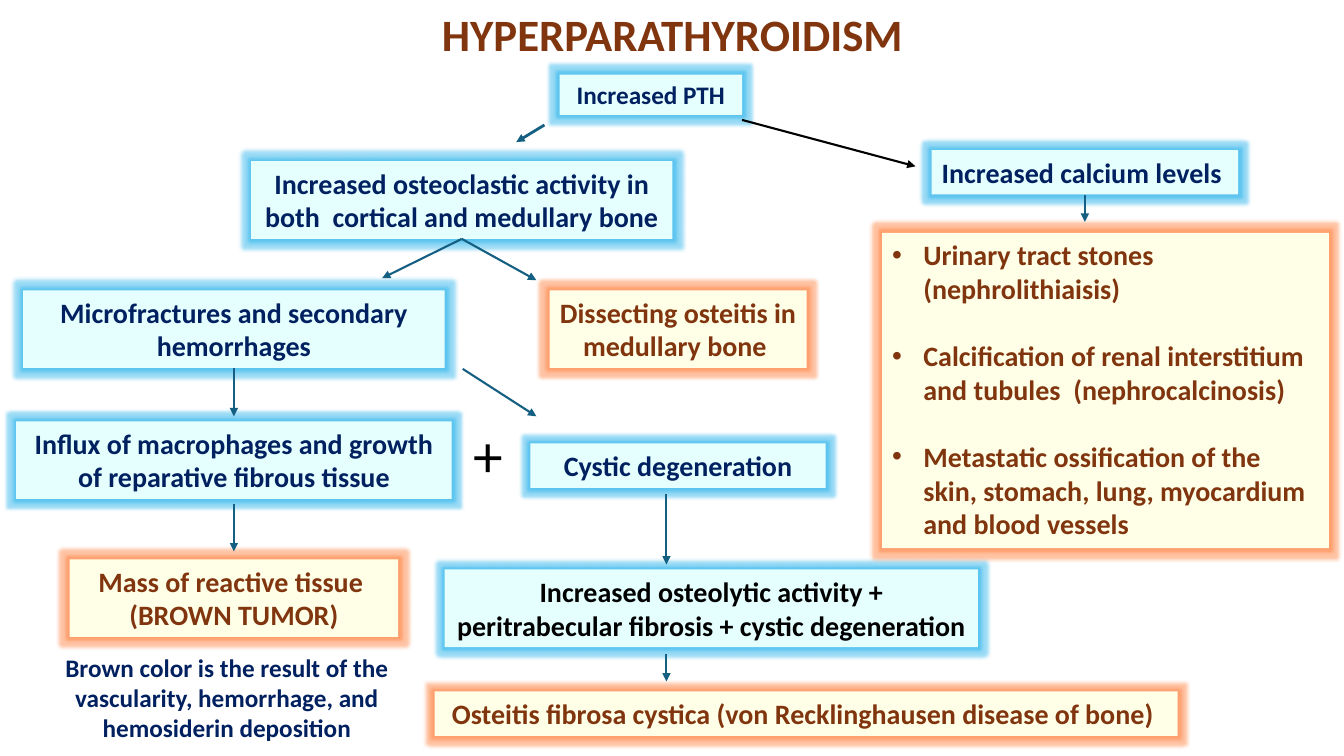
from lxml.etree import SubElement
from pptx import Presentation
from pptx.dml.color import RGBColor
from pptx.enum.shapes import MSO_CONNECTOR, MSO_SHAPE
from pptx.enum.text import MSO_ANCHOR, PP_ALIGN
from pptx.oxml.ns import qn
from pptx.util import Inches, Pt

NAVY, BROWN, BLACK, TEAL = "002060", "80350E", "000000", "156082"
CYAN, CREAM = "E5FFFF", "FFFFE7"
GLOWS = {CYAN: "00A5E8", CREAM: "FF6A1B"}


def color(value):
    return RGBColor.from_string(value)


def write(shape, lines, size, text_color, font_name="Calibri", bold=True, align=PP_ALIGN.CENTER):
    frame = shape.text_frame
    frame.word_wrap = True
    frame.vertical_anchor = MSO_ANCHOR.TOP
    frame.text = "\n".join(lines)
    font_values = {"name": font_name, "size": Pt(size), "bold": bold}
    for paragraph in frame.paragraphs:
        paragraph.alignment = align
        for run in paragraph.runs:
            for name, value in font_values.items():
                setattr(run.font, name, value)
            run.font.color.rgb = color(text_color)


presentation = Presentation()
presentation.slide_width = Inches(13.33)
presentation.slide_height = Inches(7.5)
slide = presentation.slides.add_slide(presentation.slide_layouts[6])

title = slide.shapes.add_textbox(Inches(0.92), Inches(0), Inches(11.5), Inches(0.74))
write(title, ["HYPERPARATHYROIDISM"], 32, BROWN)
title.text_frame.vertical_anchor = MSO_ANCHOR.MIDDLE
title.text_frame.paragraphs[0].line_spacing = 0.9

plus = slide.shapes.add_textbox(Inches(4.58), Inches(4.13), Inches(0.97), Inches(0.77))
write(plus, ["+"], 40, BLACK, "Lato", False, PP_ALIGN.LEFT)

caption = slide.shapes.add_textbox(Inches(0.09), Inches(6.42), Inches(4.32), Inches(1.01))
write(caption, ["Brown color is the result of the vascularity, hemorrhage, and hemosiderin deposition"],
      18, NAVY)

boxes = {
    "Increased PTH": ((5.55, 0.74, 1.81, 0.4), CYAN, NAVY, 18, ["Increased PTH"]),
    "Osteoclastic activity": ((2.49, 1.6, 4.18, 0.77), CYAN, NAVY, 20,
        ["Increased osteoclastic activity in both  cortical and medullary bone"]),
    "Microfractures": ((0.23, 2.88, 4.18, 0.77), CYAN, NAVY, 20,
        ["Microfractures and secondary hemorrhages"]),
    "Macrophages": ((0.16, 4.18, 4.32, 0.77), CYAN, NAVY, 20,
        ["Influx of macrophages and growth of reparative fibrous tissue"]),
    "Brown tumor": ((0.69, 5.55, 3.26, 0.77), CREAM, BROWN, 20,
        ["Mass of reactive tissue ", "(BROWN TUMOR)"]),
    "Dissecting osteitis": ((5.45, 2.88, 2.55, 0.77), CREAM, BROWN, 20,
        ["Dissecting osteitis in medullary bone "]),
    "Cystic degeneration": ((5.26, 4.4, 2.93, 0.44), CYAN, NAVY, 20, ["Cystic degeneration"]),
    "Osteolytic activity": ((4.41, 5.65, 5.29, 0.77), CYAN, BLACK, 20,
        ["Increased osteolytic activity + peritrabecular fibrosis + cystic degeneration"]),
    "Osteitis fibrosa": ((4.31, 6.86, 7.37, 0.44), CREAM, BROWN, 20,
        ["Osteitis fibrosa cystica (von Recklinghausen disease of bone) "]),
    "Calcium levels": ((9.24, 1.49, 3.04, 0.44), CYAN, NAVY, 20, ["Increased calcium levels "]),
    "Calcium effects": ((8.75, 2.31, 4.43, 3.13), CREAM, BROWN, 20, [
        "Urinary tract stones (nephrolithiaisis)",
        "Calcification of renal interstitium and tubules  (nephrocalcinosis)",
        "Metastatic ossification of the skin, stomach, lung, myocardium and blood vessels",
    ]),
}
shapes = {}
for name, (place, fill, text_color, size, lines) in boxes.items():
    shape = slide.shapes.add_shape(MSO_SHAPE.RECTANGLE, *map(Inches, place))
    shape.shadow.inherit = False
    shape.fill.solid()
    shape.fill.fore_color.rgb = color(fill)
    shape.line.fill.background()
    effects = shape._element.spPr.find(qn("a:effectLst"))
    glow = SubElement(effects, qn("a:glow"), rad=str(Pt(5)))
    glow_color = SubElement(glow, qn("a:srgbClr"), val=GLOWS[fill])
    SubElement(glow_color, qn("a:alpha"), val="40000")
    write(shape, lines, size, text_color)
    shapes[name] = shape

for paragraph in shapes["Calcium effects"].text_frame.paragraphs:
    paragraph.alignment = PP_ALIGN.LEFT
    paragraph.space_after = Pt(24)
    properties = paragraph._p.get_or_add_pPr()
    properties.set("marL", str(Inches(0.31)))
    properties.set("indent", str(Inches(-0.31)))
    SubElement(properties, qn("a:buFont"), typeface="Arial")
    SubElement(properties, qn("a:buChar"), char="•")

arrows = [
    ((5.4, 1.24, 5.12, 1.41), TEAL, 2, None),
    ((7.36, 1.19, 9.08, 1.65), BLACK, 1.5, None),
    ((4.58, 2.37, 3.79, 2.76), TEAL, 1.5, "Osteoclastic activity"),
    ((4.58, 2.37, 5.32, 2.78), TEAL, 1.5, "Osteoclastic activity"),
    ((2.32, 3.65, 2.32, 4.13), TEAL, 1.5, "Microfractures"),
    ((2.32, 5, 2.32, 5.47), TEAL, 1.5, None),
    ((6.61, 4.9, 6.61, 5.6), TEAL, 1.5, None),
    ((6.61, 6.49, 6.61, 6.76), TEAL, 1.5, None),
    ((10.76, 1.93, 10.76, 2.2), TEAL, 1.5, "Calcium levels"),
    ((4.59, 3.66, 5.32, 4.13), TEAL, 1.5, None),
]
for ends, line_color, width, source in arrows:
    arrow = slide.shapes.add_connector(MSO_CONNECTOR.STRAIGHT, *map(Inches, ends))
    if source:
        arrow.begin_connect(shapes[source], 2)
    arrow.line.color.rgb = color(line_color)
    arrow.line.width = Pt(width)
    SubElement(arrow.line._get_or_add_ln(), qn("a:tailEnd"), type="triangle")
    SubElement(arrow._element.spPr, qn("a:effectLst"))

presentation.save("out.pptx")
